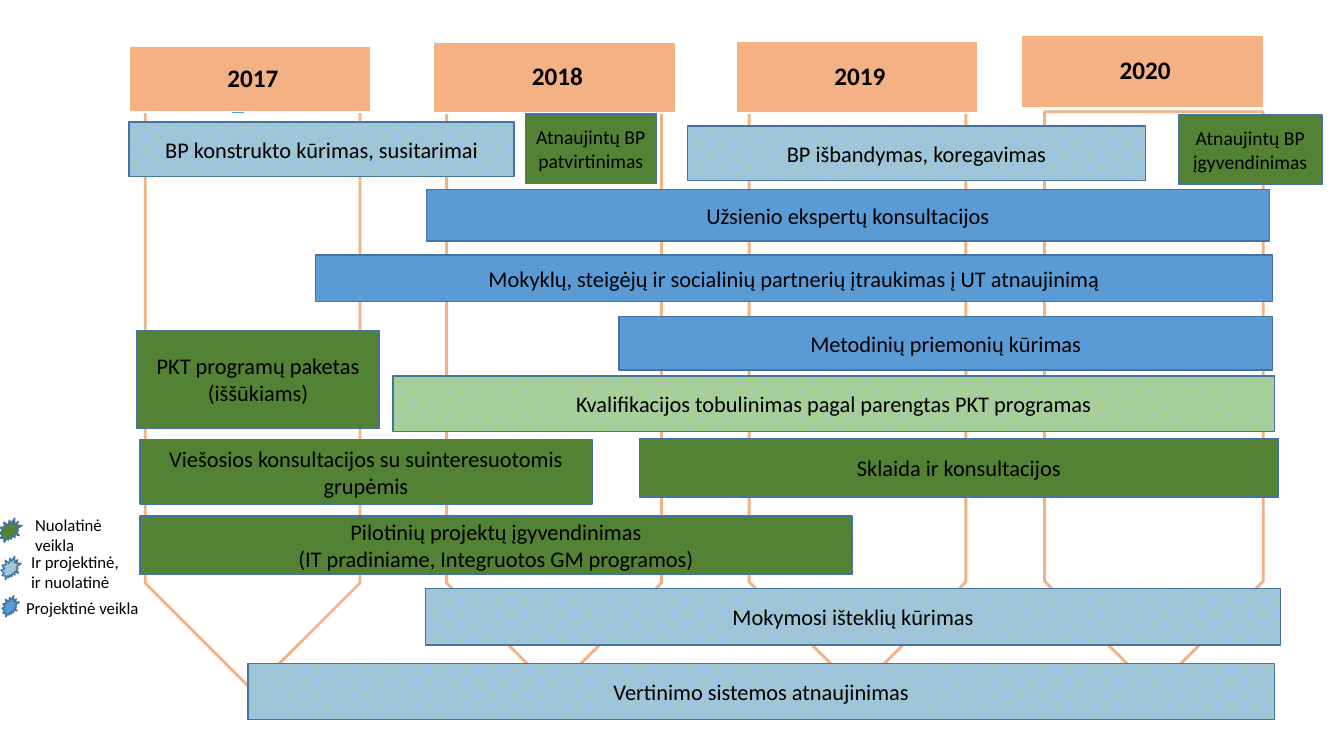
from dataclasses import dataclass

from lxml import etree
from pptx import Presentation
from pptx.dml.color import RGBColor
from pptx.enum.dml import MSO_PATTERN
from pptx.enum.shapes import MSO_CONNECTOR, MSO_SHAPE
from pptx.enum.text import MSO_ANCHOR, PP_ALIGN
from pptx.oxml.ns import qn
from pptx.util import Inches, Pt

RECTANGLE, ARROW, STAR = MSO_SHAPE.RECTANGLE, MSO_SHAPE.DOWN_ARROW, MSO_SHAPE.EXPLOSION2
STRAIGHT = MSO_CONNECTOR.STRAIGHT
CHECKER = MSO_PATTERN.LARGE_CHECKER_BOARD
MIDDLE, CENTER, LEFT = MSO_ANCHOR.MIDDLE, PP_ALIGN.CENTER, PP_ALIGN.LEFT

SLIDE_WIDTH, SLIDE_HEIGHT = Inches(13.33), Inches(7.5)
COLUMNS, ROWS = 1333, 750
FONT = "Calibri"
COLORS = {
    "year": "F4B183", "white": "FFFFFF", "text": "000000", "outline": "43739E",
    "green": "548235", "blue": "5B9BD5", "pale_green": "A9D18E", "pale_blue": "9DC3E6",
}
PERMANENT, PROJECT = ("green",), ("blue",)
MIXED, MIXED_GREEN = ("pale_green", "pale_blue"), ("pale_blue", "pale_green")

YEARS = [
    ("2017", (0, 11, 240, 65), (16, 76, 213, 574)),
    ("2018", (302, 7, 240, 70), (315, 76, 213, 574)),
    ("2019", (602, 6, 240, 71), (615, 76, 215, 574)),
    ("2020", (885, 0, 240, 72), (908, 76, 217, 574)),
]
ACTIVITIES = [
    ("Viešosios konsultacijos su suinteresuotomis grupėmis", (11, 323, 448, 64), PERMANENT, 16),
    ("PKT programų paketas (iššūkiams)", (8, 215, 240, 97), PERMANENT, 16),
    ("BP konstrukto kūrimas, susitarimai", (0, 8, 382, 54), MIXED, 16),
    ("Užsienio ekspertų konsultacijos", (295, 75, 836, 51), PROJECT, 16),
    ("Mokyklų, steigėjų ir socialinių partnerių įtraukimas į UT atnaujinimą",
     (185, 140, 949, 46), PROJECT, 16),
    ("Metodinių priemonių kūrimas", (486, 201, 648, 53), PROJECT, 16),
    ("Atnaujintų BP įgyvendinimas", (1041, 1, 142, 69), PERMANENT, 14),
    ("Sklaida ir konsultacijos", (506, 322, 634, 58), PERMANENT, 16),
    ("Vertinimo sistemos atnaujinimas", (118, 545, 1018, 56), MIXED, 16),
    ("Kvalifikacijos tobulinimas pagal parengtas PKT programas",
     (262, 260, 874, 55), MIXED_GREEN, 16),
    ("Pilotinių projektų įgyvendinimas\n(IT pradiniame, Integruotos GM programos)",
     (11, 399, 706, 58), PERMANENT, 16),
    ("Atnaujintų BP patvirtinimas", (393, 0, 130, 69), PERMANENT, 14),
    ("BP išbandymas, koregavimas", (554, 12, 454, 54), MIXED, 16),
    ("Mokymosi išteklių kūrimas", (294, 471, 848, 56), MIXED, 16),
]
LEGEND = [
    ("Nuolatinė veikla", (-1, 8, 23, 24), (25, 0, 90, 27), PERMANENT),
    ("Ir projektinė,\nir nuolatinė", (1, 46, 20, 23), (21, 36, 152, 45), MIXED),
    ("Projektinė veikla", (2, 85, 17, 21), (16, 82, 164, 27), PROJECT),
]


@dataclass
class Box:
    """A region of the slide, measured in grid columns and rows."""
    left: int
    top: int
    width: int
    height: int

    def locate(self, left, top, width, height):
        """Return the slide position and size of a cell range of this region."""
        return (round(SLIDE_WIDTH * (self.left + left) / COLUMNS),
                round(SLIDE_HEIGHT * (self.top + top) / ROWS),
                round(SLIDE_WIDTH * width / COLUMNS),
                round(SLIDE_HEIGHT * height / ROWS))


def rgb(name):
    """Look up a named colour."""
    return RGBColor.from_string(COLORS[name])


def paint(fill, colors):
    """Fill with nothing, one colour, or a checker of two."""
    if not colors:
        fill.background()
    elif len(colors) == 1:
        fill.solid()
        fill.fore_color.rgb = rgb(colors[0])
    else:
        fill.patterned()
        fill.pattern = CHECKER
        fill.fore_color.rgb, fill.back_color.rgb = map(rgb, colors)


def add_figure(slide, kind, place, colors, outline="outline", weight=1):
    """Add a flat preset shape."""
    figure = slide.shapes.add_shape(kind, *place)
    figure.shadow.inherit = False
    paint(figure.fill, colors)
    figure.line.color.rgb = rgb(outline)
    figure.line.width = Pt(weight)
    return figure


def write(figure, text, size, align=CENTER, bold=False, spacing=None):
    """Write one paragraph per line of text."""
    frame = figure.text_frame
    frame.word_wrap = True
    frame.text = text
    for paragraph in frame.paragraphs:
        paragraph.alignment = align
        paragraph.line_spacing = spacing
        paragraph.font.name = FONT
        paragraph.font.size = Pt(size)
        paragraph.font.bold = bold
        paragraph.font.color.rgb = rgb("text")


def draw_years(slide, box):
    """Draw the year arrows, their headings and the small tick."""
    for _, _, arrow_place in YEARS:
        arrow = add_figure(slide, ARROW, box.locate(*arrow_place), (), "year", 2)
        arrow.adjustments[0] = 1
        arrow.adjustments[1] = 0.5
    for year, heading_place, _ in YEARS:
        heading = add_figure(slide, RECTANGLE, box.locate(*heading_place), ("year",), "white")
        frame = heading.text_frame
        frame.vertical_anchor = MIDDLE
        frame.margin_left = Inches(0.1)
        frame.margin_right = frame.margin_top = frame.margin_bottom = Inches(0.04)
        write(heading, year, 18, bold=True, spacing=0.9)
    left, top, width, _ = box.locate(102, 76, 12, 0)
    tick = slide.shapes.add_connector(STRAIGHT, left + width, top, left, top)
    tick.line.color.rgb = rgb("blue")
    tick.line.width = Pt(0.5)
    etree.SubElement(tick._element.spPr, qn("a:effectLst"))


def draw_activities(slide, box):
    """Draw the activity bars across the years."""
    for activity, place, colors, size in ACTIVITIES:
        bar = add_figure(slide, RECTANGLE, box.locate(*place), colors)
        bar.text_frame.vertical_anchor = MIDDLE
        write(bar, activity, size)


def draw_legend(slide, box):
    """Draw the stars that explain the bar colours."""
    for label, star_place, label_place, colors in LEGEND:
        add_figure(slide, STAR, box.locate(*star_place), colors)
        caption = slide.shapes.add_textbox(*box.locate(*label_place))
        write(caption, label, 12, LEFT)


def main():
    """Build and save the slide."""
    deck = Presentation()
    deck.slide_width, deck.slide_height = SLIDE_WIDTH, SLIDE_HEIGHT
    slide = deck.slides.add_slide(deck.slide_layouts[6])
    draw_years(slide, Box(128, 35, 1126, 650))
    draw_legend(slide, Box(0, 506, 180, 109))
    draw_activities(slide, Box(128, 113, 1183, 601))
    deck.save("out.pptx")


if __name__ == "__main__":
    main()
